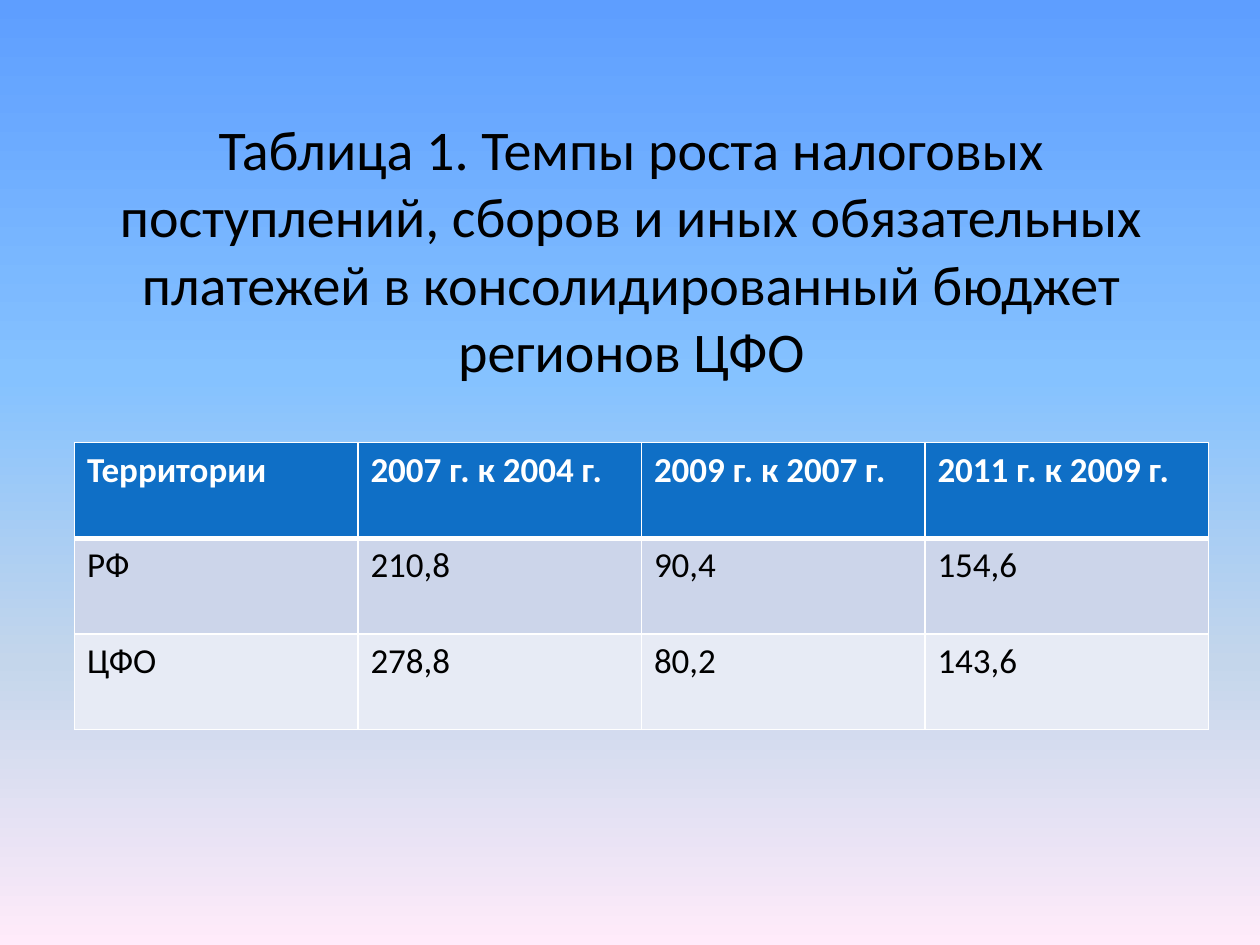
from copy import deepcopy

from pptx import Presentation
from pptx.dml.color import RGBColor
from pptx.enum.text import MSO_ANCHOR, MSO_AUTO_SIZE, PP_ALIGN
from pptx.oxml import parse_xml
from pptx.oxml.ns import nsdecls, qn
from pptx.util import Cm, Pt

BLACK = RGBColor(0x00, 0x00, 0x00)
WHITE = RGBColor(0xFF, 0xFF, 0xFF)
HEADER_BLUE = RGBColor(0x0F, 0x6F, 0xC6)
BAND_FILLS = [RGBColor(0xCC, 0xD5, 0xEA), RGBColor(0xE7, 0xEB, 0xF5)]
SKY_STOPS = [
    (0, RGBColor(0x5E, 0x9E, 0xFF)),
    (0.4, RGBColor(0x85, 0xC2, 0xFF)),
    (0.7, RGBColor(0xC4, 0xD6, 0xEB)),
    (1, RGBColor(0xFF, 0xEB, 0xFA)),
]

TITLE = ("Таблица 1. Темпы роста налоговых поступлений, сборов и иных "
         "обязательных платежей в консолидированный бюджет регионов ЦФО")
GROWTH_RATES = [
    ["Территории", "2007 г. к 2004 г.", "2009 г. к 2007 г.", "2011 г. к 2009 г."],
    ["РФ", "210,8", "90,4", "154,6"],
    ["ЦФО", "278,8", "80,2", "143,6"],
]


class SlideBuilder:
    font_name = "Calibri"
    title_size = Pt(32)
    table_size = Pt(20)

    def __init__(self, page):
        self.page = page

    def style(self, para, size, color, bold=False):
        font = para.font
        font.name, font.size, font.bold = self.font_name, size, bold
        font.color.rgb = color

    def background(self, stops):
        """Fill the page with a gradient running from top to bottom."""
        fill = self.page.background.fill
        fill.gradient()
        fill.gradient_angle = 270
        stop_list = self.page.element.find(".//" + qn("a:gsLst"))
        while len(stop_list) < len(stops):
            stop_list.append(deepcopy(stop_list[0]))
        for stop, (position, color) in zip(fill.gradient_stops, stops):
            stop.position = position
            stop.color.rgb = color

    def title(self, text, left, top, width, height):
        box = self.page.shapes.title
        box.left, box.top, box.width, box.height = left, top, width, height
        frame = box.text_frame
        frame.text = text
        frame.word_wrap = True
        frame.auto_size = MSO_AUTO_SIZE.NONE
        frame.vertical_anchor = MSO_ANCHOR.MIDDLE
        para = frame.paragraphs[0]
        para.alignment = PP_ALIGN.CENTER
        self.style(para, self.title_size, BLACK)

    def table(self, rows, left, top, width, height):
        table = self.page.shapes.add_table(
            len(rows), len(rows[0]), left, top, width, height).table
        for row, texts in enumerate(rows):
            is_header = row == 0
            fill = HEADER_BLUE if is_header else BAND_FILLS[(row - 1) % 2]
            for column, text in enumerate(texts):
                cell = table.cell(row, column)
                cell.text = text
                self.style(cell.text_frame.paragraphs[0], self.table_size,
                           WHITE if is_header else BLACK, is_header)
                self.cell_borders(cell, top=3 if row == 1 else 1,
                                  bottom=3 if is_header else 1)
                cell.fill.solid()
                cell.fill.fore_color.rgb = fill

    def cell_borders(self, cell, top, bottom):
        """Draw white borders, with the top and bottom widths in points."""
        properties = cell._tc.get_or_add_tcPr()
        for side, points in (("L", 1), ("R", 1), ("T", top), ("B", bottom)):
            properties.append(parse_xml(
                f'<a:ln{side} {nsdecls("a")} w="{Pt(points)}"><a:solidFill>'
                f'<a:srgbClr val="{WHITE}"/></a:solidFill></a:ln{side}>'))


def main():
    deck = Presentation()
    deck.slide_width, deck.slide_height = Cm(25.4), Cm(19.05)
    builder = SlideBuilder(deck.slides.add_slide(deck.slide_layouts[5]))
    builder.background(SKY_STOPS)
    builder.title(TITLE, Cm(1.3), Cm(2.34), Cm(22.86), Cm(5.36))
    builder.table(GROWTH_RATES, Cm(1.5), Cm(8.92), Cm(22.86), Cm(5.79))
    deck.save("out.pptx")


if __name__ == "__main__":
    main()
